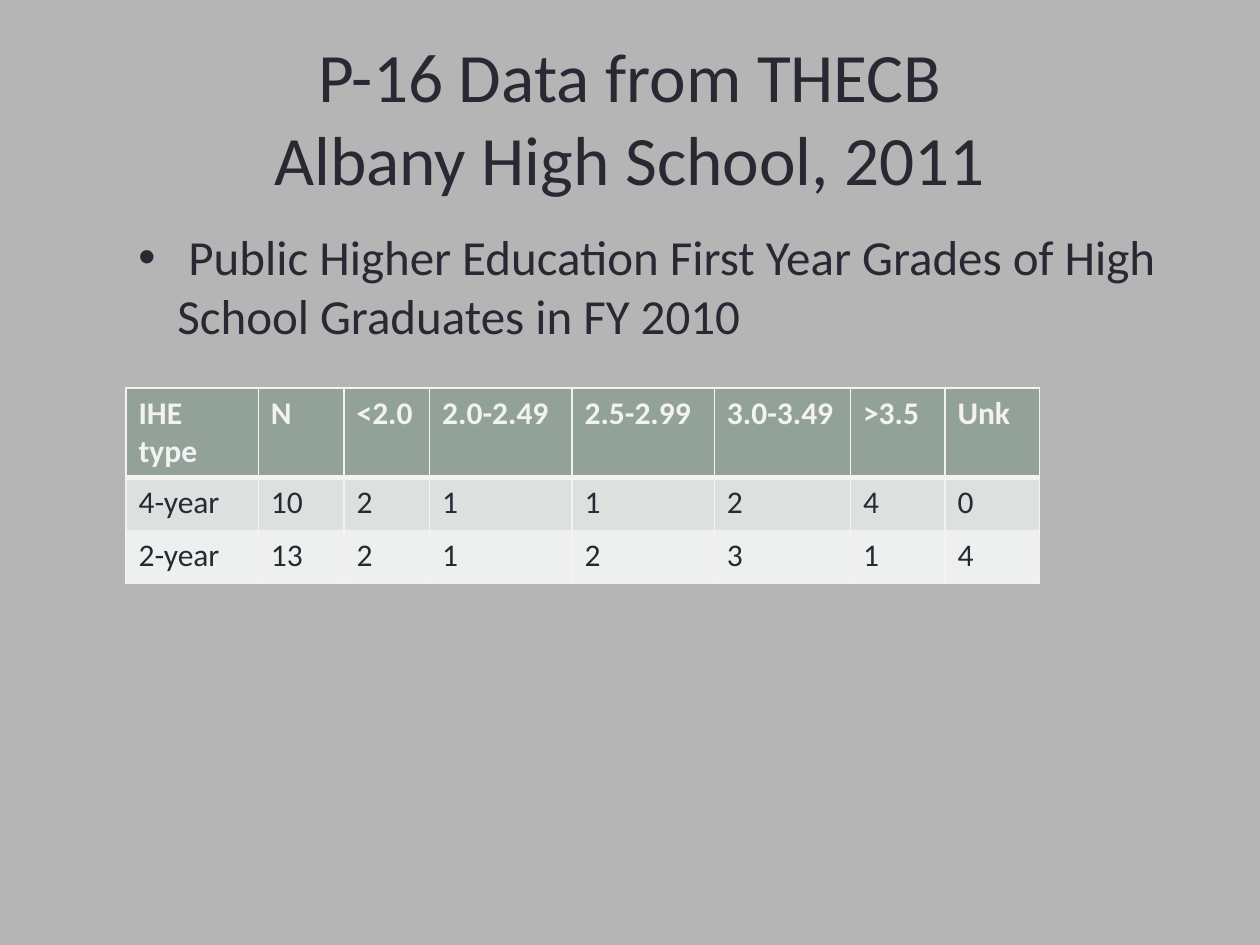
from pptx import Presentation
from pptx.dml.color import RGBColor
from pptx.enum.text import MSO_ANCHOR as Anchor, PP_ALIGN as Align
from pptx.oxml import parse_xml
from pptx.oxml.ns import nsdecls
from pptx.util import Inches, Pt

INK, PALE, GREY = "292934", "F2F2F2", "B5B5B5"
HEAD, BANDS = "93A299", ("DCE0DE", "EEF0EF")
WIDTHS = (1.05, 0.68, 0.68, 1.13, 1.13, 1.08, 0.75, 0.75)
HEIGHTS = (0.71, 0.42, 0.42)
GRADES = (
    ("IHE type", "N", "<2.0", "2.0-2.49", "2.5-2.99", "3.0-3.49", ">3.5", "Unk"),
    ("4-year", "10", "2", "1", "1", "2", "4", "0"),
    ("2-year", "13", "2", "1", "2", "3", "1", "4"),
)


def color(code):
    return RGBColor.from_string(code)


class Deck:
    """Holds the text style and the current slide."""

    def __init__(self, font):
        self.font = font
        self.prs = Presentation()
        self.prs.slide_width, self.prs.slide_height = Inches(10), Inches(7.5)
        self.slide = self.prs.slides.add_slide(self.prs.slide_layouts[6])

    def ground(self, code):
        fill = self.slide.background.fill
        fill.solid()
        fill.fore_color.rgb = color(code)

    def run(self, para, text, size, code=INK, bold=False):
        run = para.add_run()
        run.text = text
        font = run.font
        font.name, font.size, font.bold = self.font, Pt(size), bold
        font.color.rgb = color(code)

    def box(self, left, top, width, height, anchor):
        area = map(Inches, (left, top, width, height))
        frame = self.slide.shapes.add_textbox(*area).text_frame
        frame.word_wrap = True
        frame.vertical_anchor = anchor
        return frame.paragraphs[0]

    def title(self, lines, *area):
        para = self.box(*area, Anchor.MIDDLE)
        para.alignment = Align.CENTER
        for i, line in enumerate(lines):
            if i:
                para.add_line_break()
            self.run(para, line, 39.6)

    def bullet(self, text, *area):
        para = self.box(*area, Anchor.TOP)
        props = para._p.get_or_add_pPr()
        props.set("marL", str(Inches(0.81)))
        props.set("indent", str(Inches(-0.31)))
        props.append(parse_xml(f'<a:buFont {nsdecls("a")} typeface="Arial"/>'))
        props.append(parse_xml(f'<a:buChar {nsdecls("a")} char="•"/>'))
        self.run(para, text, 28)

    def edge(self, cell, side, width):
        cell._tc.get_or_add_tcPr().append(parse_xml(
            f'<a:ln{side} {nsdecls("a")} w="{Pt(width)}"><a:solidFill>'
            f'<a:srgbClr val="{PALE}"/></a:solidFill></a:ln{side}>'))

    def cell(self, cell, text, row):
        thick = {0: "B", 1: "T"}.get(row)
        for side in "LRTB":
            self.edge(cell, side, 3 if side == thick else 1)
        cell.fill.solid()
        cell.fill.fore_color.rgb = color(BANDS[row - 1] if row else HEAD)
        self.run(cell.text_frame.paragraphs[0], text, 18,
                 INK if row else PALE, row == 0)

    def table(self, rows, left, top):
        area = map(Inches, (left, top, sum(WIDTHS), sum(HEIGHTS)))
        table = self.slide.shapes.add_table(len(rows), len(WIDTHS), *area).table
        for col, width in zip(table.columns, WIDTHS):
            col.width = Inches(width)
        for r, (row, height) in enumerate(zip(rows, HEIGHTS)):
            table.rows[r].height = Inches(height)
            for c, text in enumerate(row):
                self.cell(table.cell(r, c), text, r)


def main():
    deck = Deck("Calibri")
    deck.ground(GREY)
    deck.title(("P-16 Data from THECB", "Albany High School, 2011"),
               0.5, 0.3, 9, 1.25)
    deck.bullet(" Public Higher Education First Year Grades of High School "
                "Graduates in FY 2010", 0.5, 1.75, 9, 4.95)
    deck.table(GRADES, 1, 3.08)
    deck.prs.save("out.pptx")


if __name__ == "__main__":
    main()
